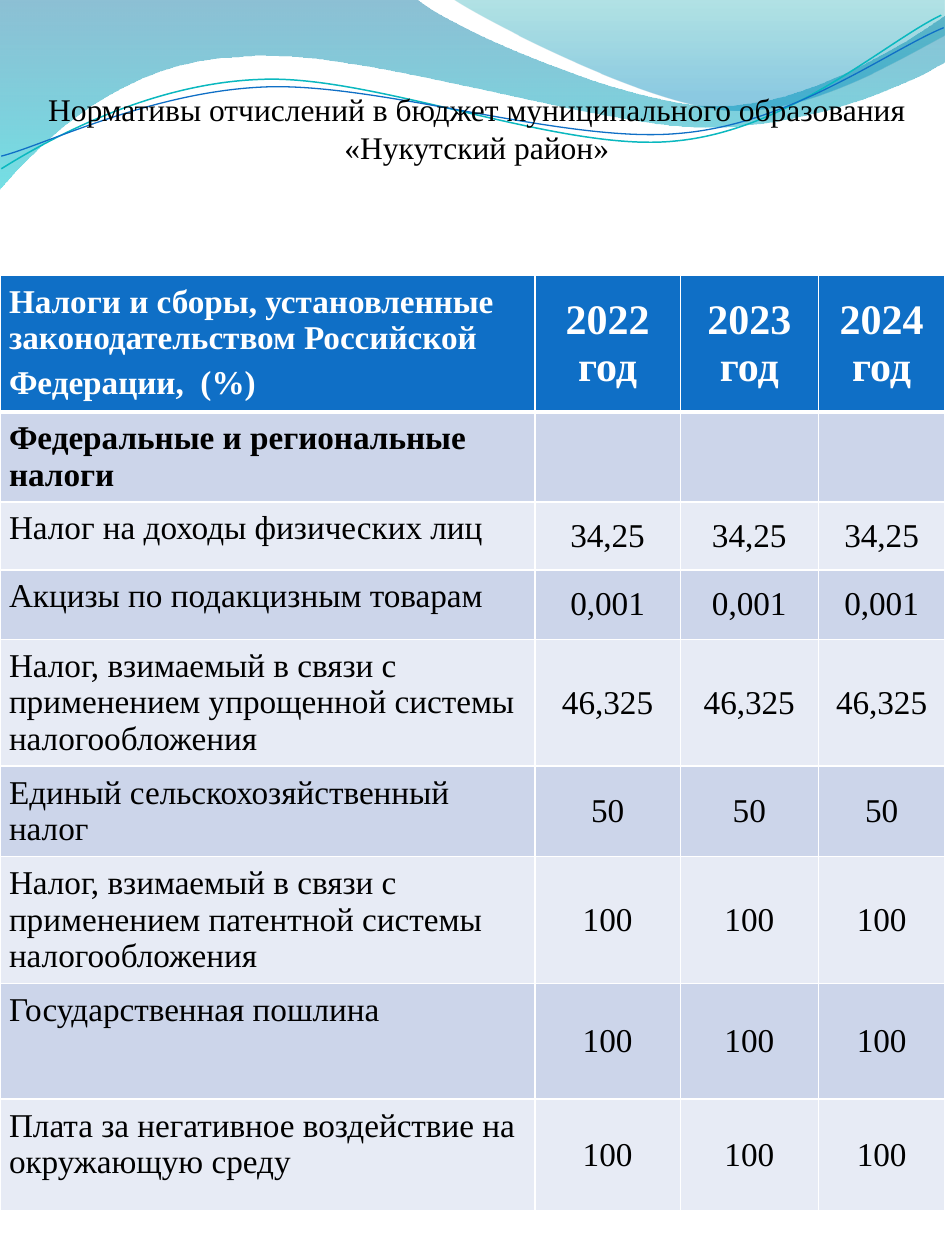
import math
import pptx
import pptx.dml.color
import pptx.enum.text
import pptx.oxml
import pptx.oxml.ns
import pptx.util
from dataclasses import dataclass

ALIGN = pptx.enum.text.PP_ALIGN
ANCHOR = pptx.enum.text.MSO_ANCHOR
NAMESPACE = pptx.oxml.ns.nsdecls("a")
qn = pptx.oxml.ns.qn


@dataclass(frozen=True)
class Theme:
    font: str = "Times New Roman"
    ink: str = "000000"
    paper: str = "FFFFFF"
    header: str = "0F6FC6"
    bands: tuple = ("CCD5EA", "E7EBF5")
    teal: str = "0AB8BF"
    # Gradient stops: position in %, colour, opacity in %
    broad_wave: tuple = ((0, "0074A1", 45), (100, "00C6CF", 55))
    corner_wave: tuple = ((0, "00A1A9", 30), (80, "008BBF", 45))
    title_size: int = 18
    text_size: int = 19
    year_size: int = 24
    rule: int = 1
    header_rule: int = 3


def rgb(value):
    return pptx.dml.color.RGBColor.from_string(value)


def write(paragraph, text, *, size, color, font, bold=False, align=ALIGN.LEFT):
    """Append one formatted run to the paragraph."""
    paragraph.alignment = align
    run = paragraph.add_run()
    run.text = text
    run.font.name, run.font.size = font, pptx.util.Pt(size)
    run.font.bold, run.font.color.rgb = bold, rgb(color)


def turn(point, centre, degrees):
    """Turn a point clockwise about the centre."""
    x, y = point[0] - centre[0], point[1] - centre[1]
    sin, cos = math.sin(math.radians(degrees)), math.cos(math.radians(degrees))
    return centre[0] + x * cos - y * sin, centre[1] + x * sin + y * cos


class Page:
    """One slide on a grid of 75 columns by 100 rows."""
    COLUMNS, ROWS = 75, 100

    def __init__(self, deck, theme):
        self.theme = theme
        self.column = deck.slide_width / self.COLUMNS
        self.row = deck.slide_height / self.ROWS
        self.slide = deck.slides.add_slide(deck.slide_layouts[5])
        self.slide.background.fill.solid()
        self.slide.background.fill.fore_color.rgb = rgb(theme.paper)

    def across(self, columns):
        return pptx.util.Emu(round(columns * self.column))

    def down(self, rows):
        return pptx.util.Emu(round(rows * self.row))

    def box(self, left, top, width, height):
        return self.across(left), self.down(top), self.across(width), self.down(height)

    def outline(self, start, steps, close):
        """Draw steps of one point as lines and steps of three as Bezier curves."""
        points = [(self.across(x), self.down(y))
                  for x, y in [start, *(point for step in steps for point in step)]]
        builder = self.slide.shapes.build_freeform(*points[0])
        builder.add_line_segments(points[1:], close=close)
        shape = builder.convert_to_shape()
        shape.shadow.inherit = False
        lines = iter(list(shape.element.iter(qn("a:lnTo"))))
        for step in steps:
            segment = [next(lines) for _ in step]
            if len(step) == 3:
                curve = pptx.oxml.parse_xml(f"<a:cubicBezTo {NAMESPACE}/>")
                segment[0].addprevious(curve)
                for line in segment:
                    curve.append(line[0])
                    line.getparent().remove(line)
        return shape

    def wave(self, stops, start, *steps):
        shape = self.outline(start, steps, close=True)
        shape.line.fill.background()
        marks = "".join(
            f'<a:gs pos="{place * 1000}"><a:srgbClr val="{color}">'
            f'<a:alpha val="{opacity * 1000}"/></a:srgbClr></a:gs>'
            for place, color, opacity in stops)
        gradient = pptx.oxml.parse_xml(
            f'<a:gradFill {NAMESPACE} rotWithShape="1">'
            f'<a:gsLst>{marks}</a:gsLst><a:lin ang="5400000" scaled="0"/></a:gradFill>')
        shape.element.spPr.find(qn("a:custGeom")).addnext(gradient)

    def ripple(self, color, weight, centre, start, *steps, tilt=2.7):
        """Draw a curve level, then tilt it onto the given points."""
        level = [[turn(point, centre, tilt) for point in step] for step in steps]
        shape = self.outline(turn(start, centre, tilt), level, close=False)
        shape.rotation = 360 - tilt
        shape.fill.background()
        shape.line.color.rgb = rgb(color)
        shape.line.width = pptx.util.Pt(weight)

    def title(self, text, *place):
        heading = self.slide.shapes.title
        heading.left, heading.top, heading.width, heading.height = self.box(*place)
        frame = heading.text_frame
        frame.word_wrap = True
        frame.auto_size = pptx.enum.text.MSO_AUTO_SIZE.NONE
        frame.vertical_anchor = ANCHOR.MIDDLE
        frame.margin_left = frame.margin_right = frame.margin_bottom = 0
        frame.margin_top = self.down(0.5)
        write(frame.paragraphs[0], text, size=self.theme.title_size,
              color=self.theme.ink, font=self.theme.font, align=ALIGN.CENTER)
        self.slide.shapes._spTree.append(heading._element)  # in front of the waves

    def borders(self, cell, **weights):
        """Rule the sides L, R, T and B; weights override the usual rule."""
        properties = cell._tc.get_or_add_tcPr()
        for place, side in enumerate("LRTB"):
            width = pptx.util.Pt(weights.get(side, self.theme.rule))
            properties.insert(place, pptx.oxml.parse_xml(
                f'<a:ln{side} {NAMESPACE} w="{width}"><a:solidFill>'
                f'<a:srgbClr val="{self.theme.paper}"/></a:solidFill></a:ln{side}>'))

    def cell(self, cell, fill, text, anchor=ANCHOR.TOP, **format):
        cell.fill.solid()
        cell.fill.fore_color.rgb = rgb(fill)
        cell.vertical_anchor = anchor
        cell.margin_left = cell.margin_right = self.across(0.72)
        cell.margin_top = cell.margin_bottom = self.down(0.66)
        if text:
            write(cell.text_frame.paragraphs[0], text, font=self.theme.font, **format)

    def rates(self, top, widths, heights, heading, years, taxes):
        """Table of taxes whose rate is the same in every year."""
        theme = self.theme
        table = self.slide.shapes.add_table(
            len(heights), len(widths), *self.box(0, top, sum(widths), sum(heights))).table
        for column, width in zip(table.columns, widths):
            column.width = self.across(width)
        for row, height in zip(table.rows, heights):
            row.height = self.down(height)

        centred = dict(anchor=ANCHOR.MIDDLE, align=ALIGN.CENTER)
        head = dict(color=theme.paper, bold=True)
        self.cell(table.cell(0, 0), theme.header, heading, size=theme.text_size, **head)
        # The taller tab sets the height of the heading's last line
        write(table.cell(0, 0).text_frame.paragraphs[0], "\t", font=theme.font,
              size=theme.year_size, **head)
        for c, year in enumerate(years, 1):
            self.cell(table.cell(0, c), theme.header, year, size=theme.year_size,
                      **head, **centred)
        body = dict(size=theme.text_size, color=theme.ink)
        for r, (tax, rate) in enumerate(taxes, 1):
            band = theme.bands[(r - 1) % 2]
            self.cell(table.cell(r, 0), band, tax, bold=not rate, **body)
            for c in range(1, len(widths)):
                self.cell(table.cell(r, c), band, rate, **body, **centred)
        thick = {0: dict(B=theme.header_rule), 1: dict(T=theme.header_rule)}
        for r, row in enumerate(table.rows):
            for cell in row.cells:
                self.borders(cell, **thick.get(r, {}))


TAXES = [
    ("Федеральные и региональные налоги", ""),
    ("Налог на доходы физических лиц", "34,25"),
    ("Акцизы по подакцизным товарам", "0,001"),
    ("Налог, взимаемый в связи с применением упрощенной системы налогообложения", "46,325"),
    ("Единый сельскохозяйственный налог", "50"),
    ("Налог, взимаемый в связи с применением патентной системы налогообложения", "100"),
    ("Государственная пошлина", "100"),
    ("Плата за негативное воздействие на окружающую среду", "100"),
]


def main():
    deck = pptx.Presentation()
    deck.slide_width, deck.slide_height = pptx.util.Inches(7.5), pptx.util.Inches(10)
    theme = Theme()
    page = Page(deck, theme)

    page.wave(theme.broad_wave, (0, -0.1), [(33, -0.1)],
              [(35.7, 2.2), (49.8, 8.4), (56.9, 8.4)],
              [(64, 8.4), (71.9, 3.4), (75, 1.2)], [(75.1, 4.8)],
              [(73.8, 5.8), (65.2, 10.1), (55.9, 10.1)],
              [(46.6, 10), (28.6, 3.7), (19.3, 4.5)],
              [(9.7, 4.7), (3.4, 11.1), (-0.1, 15.1)])
    page.wave(theme.corner_wave, (35.9, -0.1),
              [(38.2, 1.5), (51.1, 8.2), (57.7, 8.7)],
              [(64.2, 9.2), (72.1, 4.3), (75, 2.8)], [(75, 0)])
    page.ripple(theme.teal, 0.85, (37.4, 7.75), (0.1, 13.4),
                [(3.6, 11.2), (11.8, 6.6), (20.7, 6.3)],
                [(29.6, 5.9), (44.5, 12.1), (53.5, 11.2)],
                [(62.6, 10.4), (70.3, 3.3), (74.7, 1.2)])
    page.ripple(theme.header, 0.75, (37.55, 7.85), (0.1, 12.4),
                [(3.6, 11.5), (12.2, 7.2), (21.2, 6.9)],
                [(30.2, 6.6), (44.9, 11.4), (53.8, 10.6)],
                [(62.8, 9.9), (70.5, 4), (74.9, 2.2)])

    page.title("Нормативы отчислений в бюджет муниципального образования «Нукутский район»",
               3.8, 4.15, 68.1, 11.5)
    page.rates(21.85, (42.45, 11.55, 10.95, 10.05),
               (10.3, 6.5, 5.4, 5.5, 9.2, 5.4, 9.2, 9.2, 8.9),
               "Налоги и сборы, установленные законодательством Российской Федерации,  (%)",
               [f"{year} год" for year in (2022, 2023, 2024)], TAXES)
    deck.save("out.pptx")


if __name__ == "__main__":
    main()
